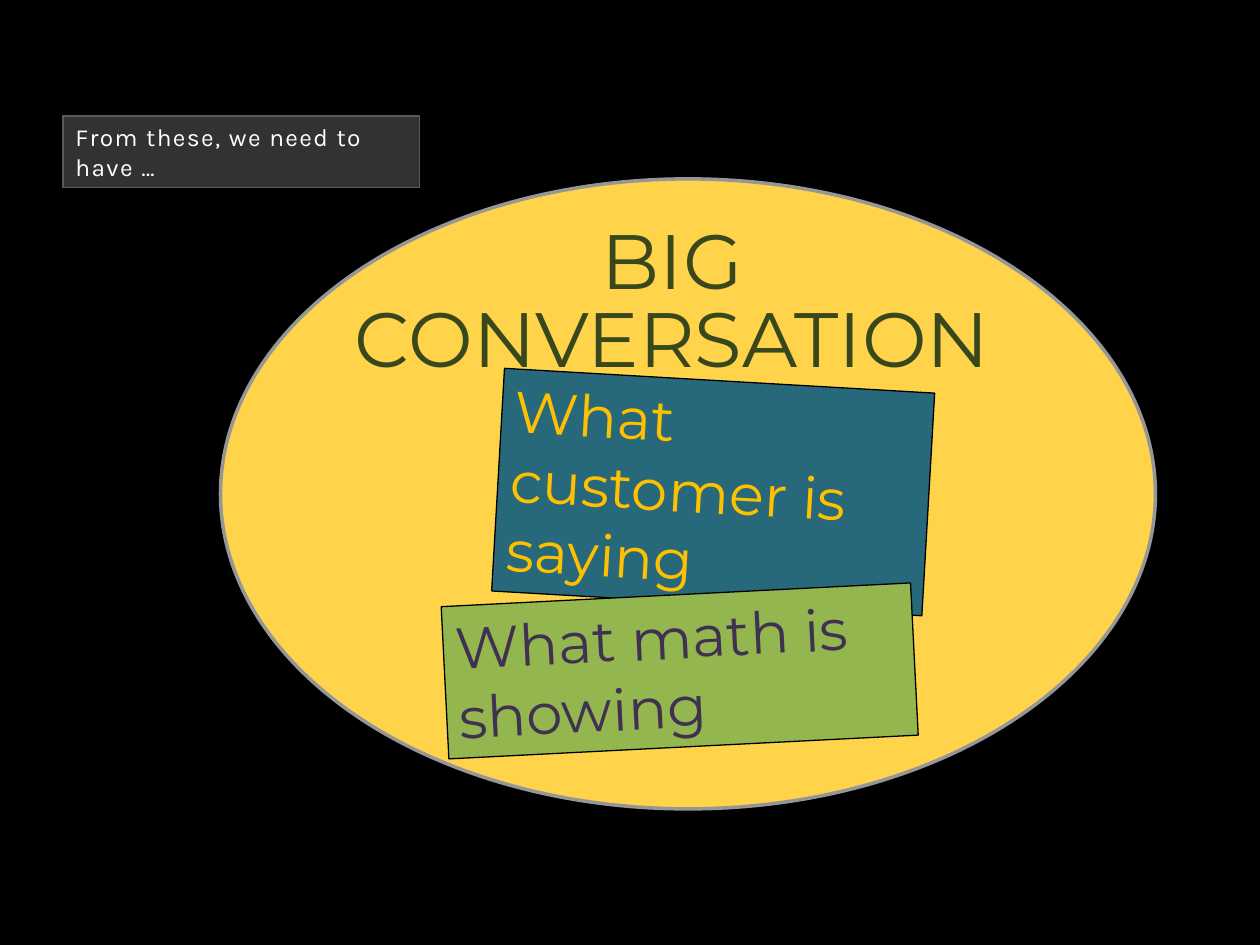
"""Build the "Big conversation" slide."""
from lxml.etree import SubElement
from pptx import Presentation
from pptx.dml.color import RGBColor
from pptx.enum.shapes import MSO_SHAPE
from pptx.enum.text import MSO_ANCHOR, MSO_AUTO_SIZE, PP_ALIGN
from pptx.oxml.ns import qn
from pptx.util import Inches, Pt

COLORS = {
    "background": "000000",
    "outline": "000000",
    "ellipse": "FFD44B",
    "ellipse_line": "969696",
    "title": "39471D",
    "customer": "27697B",
    "customer_text": "FFC000",
    "math": "93B64E",
    "math_text": "403152",
    "caption": "343434",
    "caption_line": "5A5A5A",
    "caption_text": "FFFFFF",
}


def add_filled_shape(kind, box, fill, line, line_width):
    shape = slide.shapes.add_shape(kind, *map(Inches, box))
    shape.shadow.inherit = False
    shape.fill.solid()
    shape.fill.fore_color.rgb = RGBColor.from_string(COLORS[fill])
    shape.line.color.rgb = RGBColor.from_string(COLORS[line])
    shape.line.width = Pt(line_width)
    return shape


def write_text(shape, text, font_name, size, color, alignment=PP_ALIGN.LEFT):
    text_frame = shape.text_frame
    text_frame.text = text
    text_frame.word_wrap = True
    text_frame.vertical_anchor = MSO_ANCHOR.TOP
    paragraph = text_frame.paragraphs[0]
    paragraph.alignment = alignment
    font = paragraph.runs[0].font
    font.name = font_name
    font.size = Pt(size)
    font.color.rgb = RGBColor.from_string(COLORS[color])
    return paragraph


presentation = Presentation()
presentation.slide_width = Inches(10)
presentation.slide_height = Inches(7.5)
slide = presentation.slides.add_slide(presentation.slide_layouts[6])
slide.background.fill.solid()
slide.background.fill.fore_color.rgb = RGBColor.from_string(COLORS["background"])

add_filled_shape(MSO_SHAPE.OVAL, (1.75, 1.42, 7.42, 5), "ellipse", "ellipse_line", 2)

title = slide.shapes.add_textbox(Inches(2.17), Inches(1.75), Inches(6.33), Inches(1.67))
title_paragraph = write_text(
    title, "BIG CONVERSATION", "Montserrat", 44, "title", PP_ALIGN.CENTER
)
title_paragraph.line_spacing = 0.85

cards = [
    ("What customer is saying", (3.95, 3.02, 3.42, 1.77), 3.3, "customer"),
    ("What math is showing", (3.53, 4.72, 3.73, 1.21), 357.1, "math"),
]
for text, box, rotation, name in cards:
    card = add_filled_shape(MSO_SHAPE.RECTANGLE, box, name, "outline", 0.75)
    card.rotation = rotation
    write_text(card, text, "Montserrat", 33, f"{name}_text")
    card.text_frame.auto_size = MSO_AUTO_SIZE.SHAPE_TO_FIT_TEXT

caption = add_filled_shape(
    MSO_SHAPE.RECTANGLE, (0.5, 0.92, 2.83, 0.57), "caption", "caption_line", 0.75
)
caption_paragraph = write_text(
    caption, "From these, we need to have …", "Karla", 14, "caption_text"
)
caption.text_frame.auto_size = MSO_AUTO_SIZE.SHAPE_TO_FIT_TEXT
caption_paragraph.runs[0].font._element.set("spc", "80")
caption_color = caption._element.spPr.find(qn("a:solidFill")).find(qn("a:srgbClr"))
SubElement(caption_color, qn("a:alpha")).set("val", "97000")

presentation.save("out.pptx")
